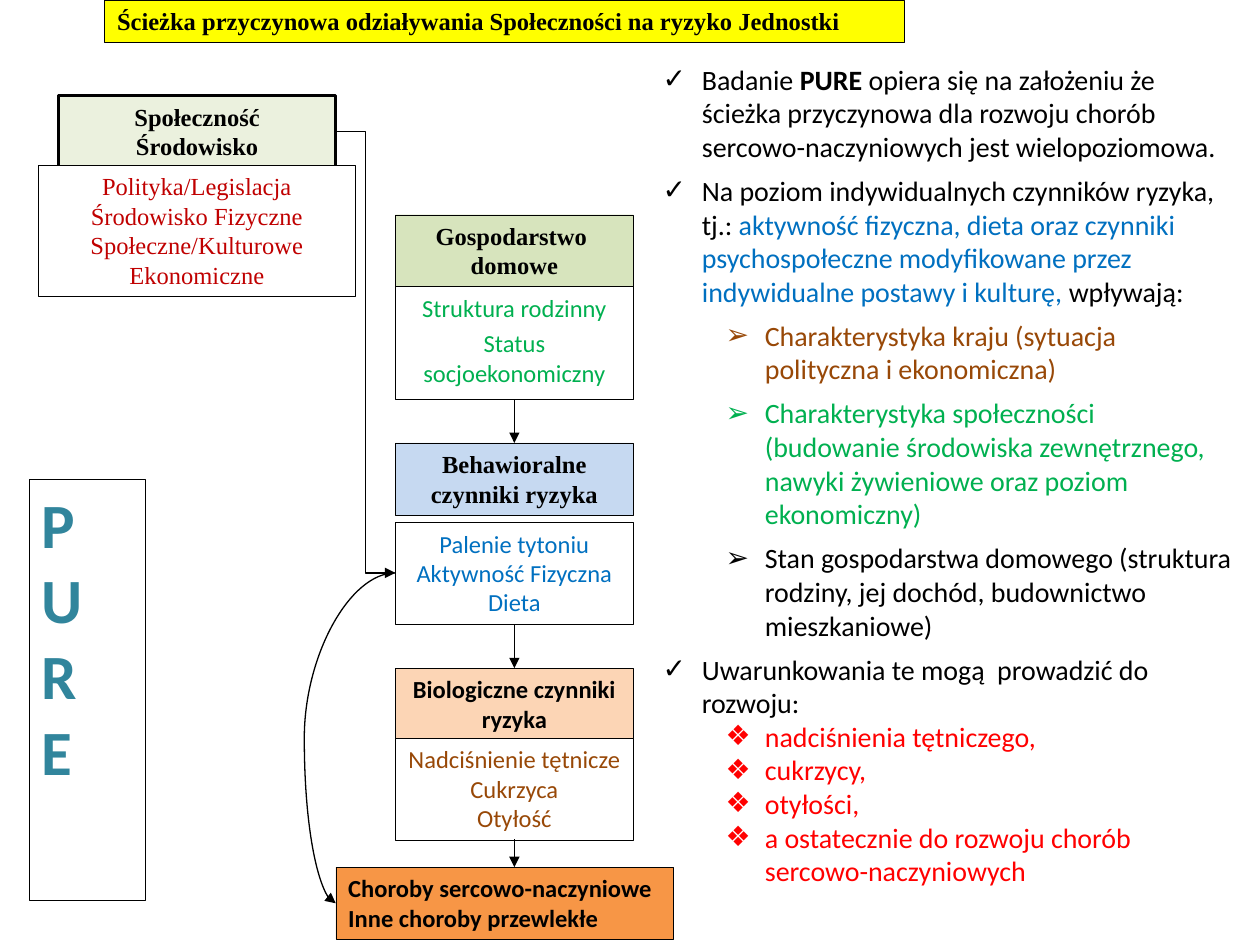
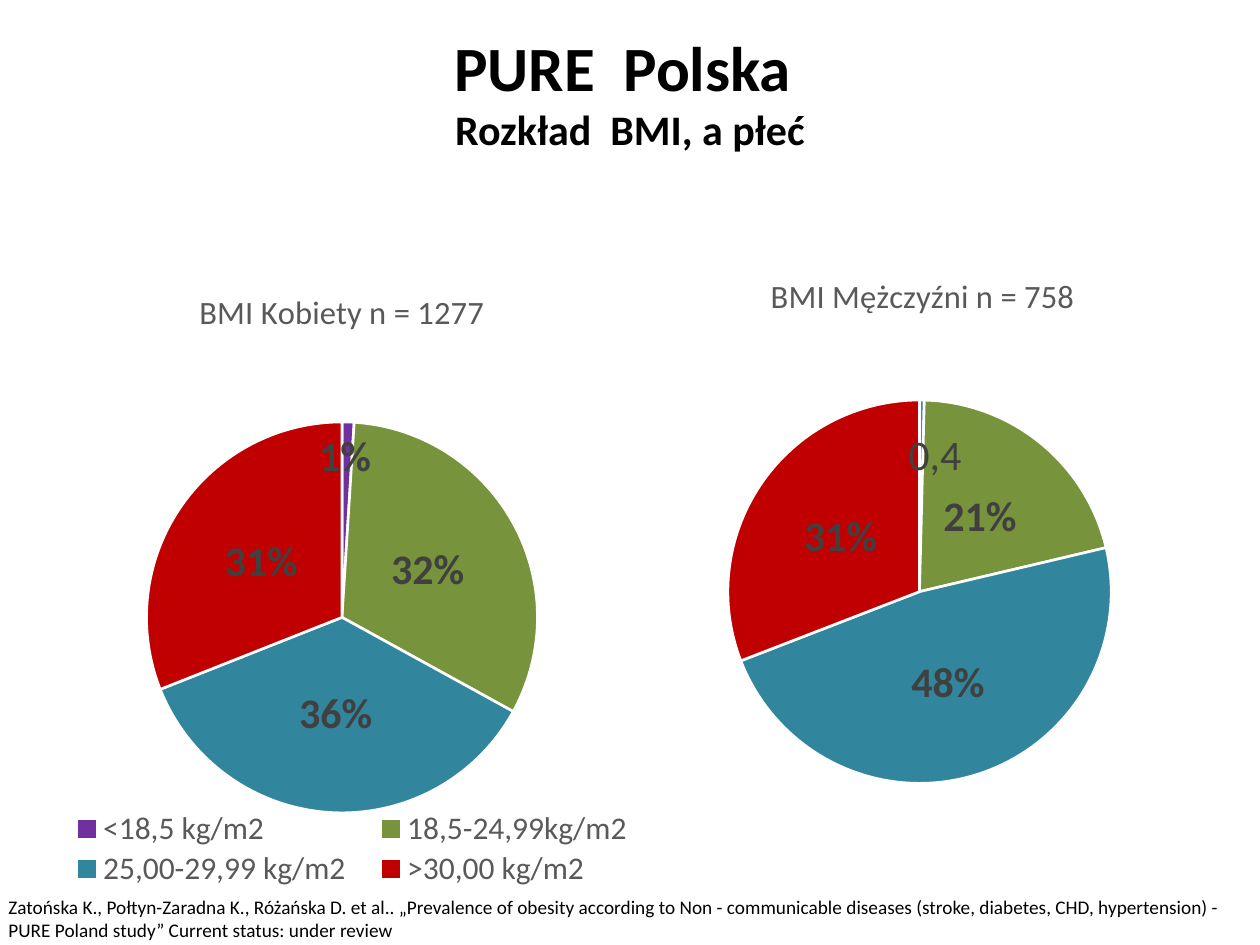
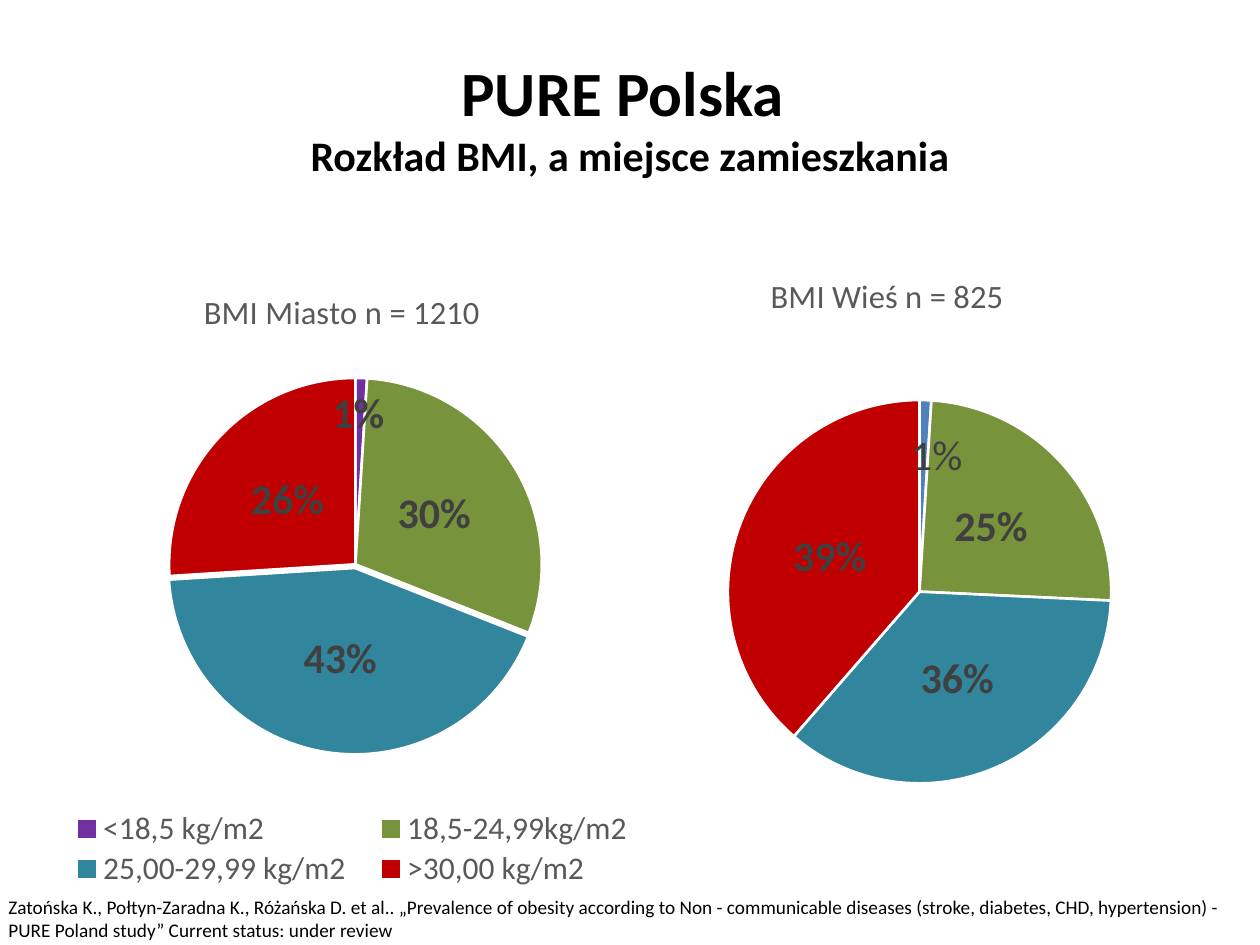
"""Build three slides on the PURE study: a causal path and BMI pie charts."""
from lxml.etree import SubElement
from pptx import Presentation
from pptx.chart.data import CategoryChartData
from pptx.dml.color import RGBColor
from pptx.enum.chart import XL_CHART_TYPE as ChartType
from pptx.enum.chart import XL_LABEL_POSITION as LabelPosition
from pptx.enum.chart import XL_LEGEND_POSITION as LegendPosition
from pptx.enum.shapes import MSO_CONNECTOR as Link
from pptx.enum.shapes import MSO_SHAPE as Shape
from pptx.enum.text import MSO_ANCHOR as Anchor
from pptx.enum.text import PP_ALIGN as Align
from pptx.oxml.ns import qn
from pptx.util import Cm, Pt

SERIF, SANS = "Times New Roman", "Calibri"
BLACK, WHITE, GREY, DARK = "000000", "FFFFFF", "595959", "404040"
RED, BLUE, GREEN, BROWN, TEAL = "FF0000", "0070C0", "00B050", "984807", "31859C"
rgb = RGBColor.from_string


def write(paragraph, text, size, color=BLACK, bold=False, font=SANS):
    run = paragraph.add_run()
    run.text = text
    run.font.size = Pt(size)
    run.font.name = font
    run.font.bold = bold
    run.font.color.rgb = rgb(color)


def place(parent, index, **values):
    for old in parent.findall(qn("c:layout")):
        parent.remove(old)
    layout = SubElement(parent, qn("c:layout"))
    parent.insert(index, layout)
    manual = SubElement(layout, qn("c:manualLayout"))
    for key, value in values.items():
        SubElement(manual, qn(f"c:{key}")).set("val", str(value))


prs = Presentation()
prs.slide_width, prs.slide_height = Cm(25.4), Cm(19.05)
blank = prs.slide_layouts[6]

pathway = prs.slides.add_slide(blank)
STEP_LEFT, STEP_WIDTH, HEADING_HEIGHT = 7.97, 4.8, 1.45
STEP_MIDDLE = STEP_LEFT + STEP_WIDTH / 2
stages = [
    (2.11, 0, 16.13, 0.86, "FFFF00", 0.25, Align.LEFT, SERIF, 14, BLACK, True,
     ["Ścieżka przyczynowa odziaływania Społeczności na ryzyko Jednostki"]),
    (1.18, 1.93, 5.59, HEADING_HEIGHT, "EBF1DE", 2, Align.CENTER, SERIF, 14, BLACK, True,
     ["Społeczność", "Środowisko"]),
    (0.77, 3.33, 6.4, 2.64, WHITE, 0.25, Align.CENTER, SERIF, 14, "C00000", False,
     ["Polityka/Legislacja", "Środowisko Fizyczne", "Społeczne/Kulturowe", "Ekonomiczne"]),
    (0.59, 9.66, 2.34, 8.48, WHITE, 0.25, Align.LEFT, SANS, 36, TEAL, True, ["PURE"]),
    (STEP_LEFT, 4.33, STEP_WIDTH, HEADING_HEIGHT, "D7E4BD", 0.25, Align.CENTER, SERIF, 14,
     BLACK, True, ["Gospodarstwo ", "domowe"]),
    (STEP_LEFT, 5.78, STEP_WIDTH, 2.27, WHITE, 0.25, Align.CENTER, SANS, 14, GREEN, False,
     ["Struktura rodzinny", "Status socjoekonomiczny"]),
    (STEP_LEFT, 8.93, STEP_WIDTH, HEADING_HEIGHT, "C6D9F1", 0.25, Align.CENTER, SERIF, 14,
     BLACK, True, ["Behawioralne czynniki ryzyka"]),
    (STEP_LEFT, 10.53, STEP_WIDTH, 2.05, WHITE, 0.25, Align.CENTER, SANS, 14, BLUE, False,
     ["Palenie tytoniu", "Aktywność Fizyczna", "Dieta"]),
    (STEP_LEFT, 13.47, STEP_WIDTH, HEADING_HEIGHT, "FCD5B5", 0.25, Align.CENTER, SANS, 14,
     BLACK, True, ["Biologiczne czynniki ryzyka"]),
    (STEP_LEFT, 14.88, STEP_WIDTH, 2.05, WHITE, 0.25, Align.CENTER, SANS, 14, BROWN, False,
     ["Nadciśnienie tętnicze", "Cukrzyca", "Otyłość"]),
    (6.77, 17.48, 6.81, HEADING_HEIGHT, "F79646", 0.25, Align.LEFT, SANS, 14, BLACK, True,
     ["Choroby sercowo-naczyniowe", "Inne choroby przewlekłe"]),
]
for left, top, width, height, fill, border, align, font, size, color, bold, lines in stages:
    stage = pathway.shapes.add_shape(Shape.RECTANGLE, Cm(left), Cm(top), Cm(width), Cm(height))
    stage.shadow.inherit = False
    stage.fill.solid()
    stage.fill.fore_color.rgb = rgb(fill)
    stage.line.color.rgb = rgb(BLACK)
    stage.line.width = Pt(border)
    frame = stage.text_frame
    frame.word_wrap = True
    frame.vertical_anchor = Anchor.TOP
    if lines == ["PURE"]:
        frame._txBody.bodyPr.set("vert", "wordArtVert")
    for number, line in enumerate(lines):
        paragraph = frame.add_paragraph() if number else frame.paragraphs[0]
        paragraph.alignment = align
        if line.startswith("Status"):
            paragraph.space_before = Pt(3.5)
        write(paragraph, line, size, color, bold, font)

influences = [
    (Link.ELBOW, 6.77, 2.65, STEP_LEFT, 11.55, 50000),
    (Link.CURVE, STEP_LEFT, 11.55, 6.77, 18.21, 152900),
    (Link.STRAIGHT, STEP_MIDDLE, 16.92, STEP_MIDDLE, 17.48, None),
    (Link.STRAIGHT, STEP_MIDDLE, 12.58, STEP_MIDDLE, 13.47, None),
    (Link.STRAIGHT, STEP_MIDDLE, 8.05, STEP_MIDDLE, 8.93, None),
]
for kind, x1, y1, x2, y2, bend in influences:
    influence = pathway.shapes.add_connector(kind, Cm(x1), Cm(y1), Cm(x2), Cm(y2))
    influence.line.color.rgb = rgb(BLACK)
    influence.line.width = Pt(0.75)
    properties = influence._element.spPr
    SubElement(properties.find(qn("a:ln")), qn("a:tailEnd")).set("type", "triangle")
    SubElement(properties, qn("a:effectLst"))
    if bend:
        guide = SubElement(properties.find(qn("a:prstGeom")).find(qn("a:avLst")), qn("a:gd"))
        guide.set("name", "adj1")
        guide.set("fmla", f"val {bend}")

findings = [
    ("✓", 0.79, 6, [
        ("Badanie ", BLACK, False), ("PURE", BLACK, True),
        (" opiera się na założeniu że ścieżka przyczynowa dla rozwoju chorób "
         "sercowo-naczyniowych jest wielopoziomowa.", BLACK, False)]),
    ("✓", 0.79, 6, [
        ("Na poziom indywidualnych czynników ryzyka, tj.: ", BLACK, False),
        ("aktywność fizyczna, dieta oraz czynniki psychospołeczne modyfikowane przez "
         "indywidualne postawy i kulturę, ", BLUE, False),
        ("wpływają:", BLACK, False)]),
    ("➢", 2.06, 6, [
        ("Charakterystyka kraju (sytuacja polityczna i ekonomiczna)", BROWN, False)]),
    ("➢", 2.06, 6, [
        ("Charakterystyka społeczności (budowanie środowiska zewnętrznego, nawyki "
         "żywieniowe oraz poziom ekonomiczny)", GREEN, False)]),
    ("➢", 2.06, 6, [
        ("Stan gospodarstwa domowego (struktura rodziny, jej dochód, budownictwo "
         "mieszkaniowe)", BLACK, False)]),
    ("✓", 0.79, 0, [("Uwarunkowania te mogą  prowadzić do rozwoju:", BLACK, False)]),
    ("❖", 2.06, 0, [("nadciśnienia tętniczego,", RED, False)]),
    ("❖", 2.06, 0, [("cukrzycy,", RED, False)]),
    ("❖", 2.06, 0, [("otyłości,", RED, False)]),
    ("❖", 2.06, 0, [("a ostatecznie do rozwoju chorób sercowo-naczyniowych", RED, False)]),
]
frame = pathway.shapes.add_textbox(Cm(13.11), Cm(1.13), Cm(11.99), Cm(17.04)).text_frame
frame.word_wrap = True
for number, (bullet, indent, gap, phrases) in enumerate(findings):
    paragraph = frame.add_paragraph() if number else frame.paragraphs[0]
    paragraph.space_after = Pt(gap)
    settings = paragraph._p.get_or_add_pPr()
    settings.set("marL", str(Cm(indent)))
    settings.set("indent", str(-Cm(0.79)))
    SubElement(settings, qn("a:buFont")).set("typeface", SANS)
    SubElement(settings, qn("a:buChar")).set("char", bullet)
    for text, color, bold in phrases:
        write(paragraph, text, 16, color, bold)

BMI_CLASSES = ["<18,5 kg/m2", "18,5-24,99kg/m2", "25,00-29,99 kg/m2", ">30,00 kg/m2"]
SLICES = ["77933C", TEAL, "C00000"]
CITATION = ("Zatońska K., Połtyn-Zaradna K., Różańska D. et al.. „Prevalence of obesity according "
            "to Non - communicable diseases (stroke, diabetes, CHD, hypertension) - PURE Poland "
            "study” Current status: under review")
LEFT_PLACE, RIGHT_PLACE = (0.1, 5.33, 13.59, 12.6), (13.69, 4.93, 9.6, 11.2)
RIGHT_PLOT = (0.1, 0.28, 0.81, 0.69)
comparisons = [
    ("PURE  Polska ", "Rozkład  BMI, a płeć", 0.25, [
        ("BMI Kobiety n = 1277", [1, 32, 36, 31], LEFT_PLACE,
         (0.21, 0.25, 0.58, 0.63), (0, -0.1), None, False),
        ("BMI Mężczyźni n = 758", [0.4, 21, 48, 31], RIGHT_PLACE,
         RIGHT_PLOT, (0.03, -0.07), "0,4", False)]),
    ("PURE Polska ", "Rozkład BMI, a miejsce zamieszkania", 0.76, [
        ("BMI Miasto n = 1210", [1, 30, 43, 26], LEFT_PLACE,
         (0.2, 0.14, 0.64, 0.68), (0, -0.09), None, True),
        ("BMI Wieś n = 825", [1, 25, 36, 39], RIGHT_PLACE,
         RIGHT_PLOT, (0.03, -0.07), "1%", False)]),
]
for title, subtitle, title_top, groups in comparisons:
    slide = prs.slides.add_slide(blank)
    frame = slide.shapes.add_textbox(Cm(1.27), Cm(title_top), Cm(22.86), Cm(3.18)).text_frame
    frame.word_wrap = True
    frame.vertical_anchor = Anchor.MIDDLE
    heading = frame.paragraphs[0]
    heading.alignment = Align.CENTER
    write(heading, title, 36, bold=True)
    heading.add_line_break()
    write(heading, subtitle, 24, bold=True)

    for name, shares, box, plot_box, shift, caption, exploded in groups:
        on_left = box == LEFT_PLACE
        data = CategoryChartData()
        data.categories = BMI_CLASSES if on_left else ["1", "2", "3", "4"]
        data.add_series(name, shares)
        chart = slide.shapes.add_chart(ChartType.PIE, *map(Cm, box), data).chart
        chart.font.size = Pt(10)
        chart.font.name = SANS
        chart.font.color.rgb = rgb(BLACK)
        chart.has_title = True
        write(chart.chart_title.text_frame.paragraphs[0], name, 18.6, GREY)
        chart.has_legend = on_left
        if on_left:
            chart.legend.position = LegendPosition.BOTTOM
            chart.legend.include_in_layout = False
            chart.legend.font.size = Pt(18)
            chart.legend.font.name = SANS
            chart.legend.font.color.rgb = rgb(GREY)
            place(chart.element.xpath(".//c:legend")[0], 1,
                  xMode="edge", yMode="edge", x=0.07, y=0.87, w=0.89, h=0.13)
        else:
            place(chart.element.xpath(".//c:title")[0], 1,
                  xMode="edge", yMode="edge", x=0.18, y=0.04)
        x, y, w, h = plot_box
        place(chart.element.xpath(".//c:plotArea")[0], 0, layoutTarget="inner",
              xMode="edge", yMode="edge", x=x, y=y, w=w, h=h)

        pie = chart.plots[0]
        pie.vary_by_categories = True
        series = pie.series[0]
        for number, color in enumerate(["7030A0" if on_left else "4F81BD"] + SLICES):
            piece = series.points[number].format
            piece.fill.solid()
            piece.fill.fore_color.rgb = rgb(color)
            piece.line.color.rgb = rgb(WHITE)
            piece.line.width = Pt(1.5)
        if exploded:
            slices = chart.element.xpath(".//c:dPt")
            for piece, offset in zip(slices, (0, 0, 2, 0)):
                explosion = SubElement(piece, qn("c:explosion"))
                explosion.set("val", str(offset))
                piece.find(qn("c:spPr")).addprevious(explosion)
            explosion = SubElement(slices[0].getparent(), qn("c:explosion"))
            explosion.set("val", "14")
            slices[0].addprevious(explosion)

        labels = series.data_labels
        labels.show_percentage = True
        labels.show_value = False
        labels.number_format = "0%"
        labels.number_format_is_linked = False
        labels.position = LabelPosition.CENTER
        smallest = series.points[0].data_label
        smallest.position = LabelPosition.CENTER
        fonts = [labels.font]
        if caption:
            write(smallest.text_frame.paragraphs[0], caption, 24, DARK)
        else:
            fonts.append(smallest.font)
        for font in fonts:
            font.size = Pt(24)
            font.bold = True
            font.name = SANS
            font.color.rgb = rgb(DARK)
        label = chart.element.xpath(".//c:dLbl")[0]
        label.find(qn("c:showVal")).set("val", "0")
        label.find(qn("c:showPercent")).set("val", "1")
        place(label, 1, x=shift[0], y=shift[1])
        if not caption:
            number_format = SubElement(label, qn("c:numFmt"))
            number_format.set("formatCode", "0%")
            number_format.set("sourceLinked", "0")
            label.insert(2, number_format)

    frame = slide.shapes.add_textbox(Cm(-0.08), Cm(17.93), Cm(25.48), Cm(1.19)).text_frame
    frame.word_wrap = True
    write(frame.paragraphs[0], CITATION, 11)

prs.save("out.pptx")
